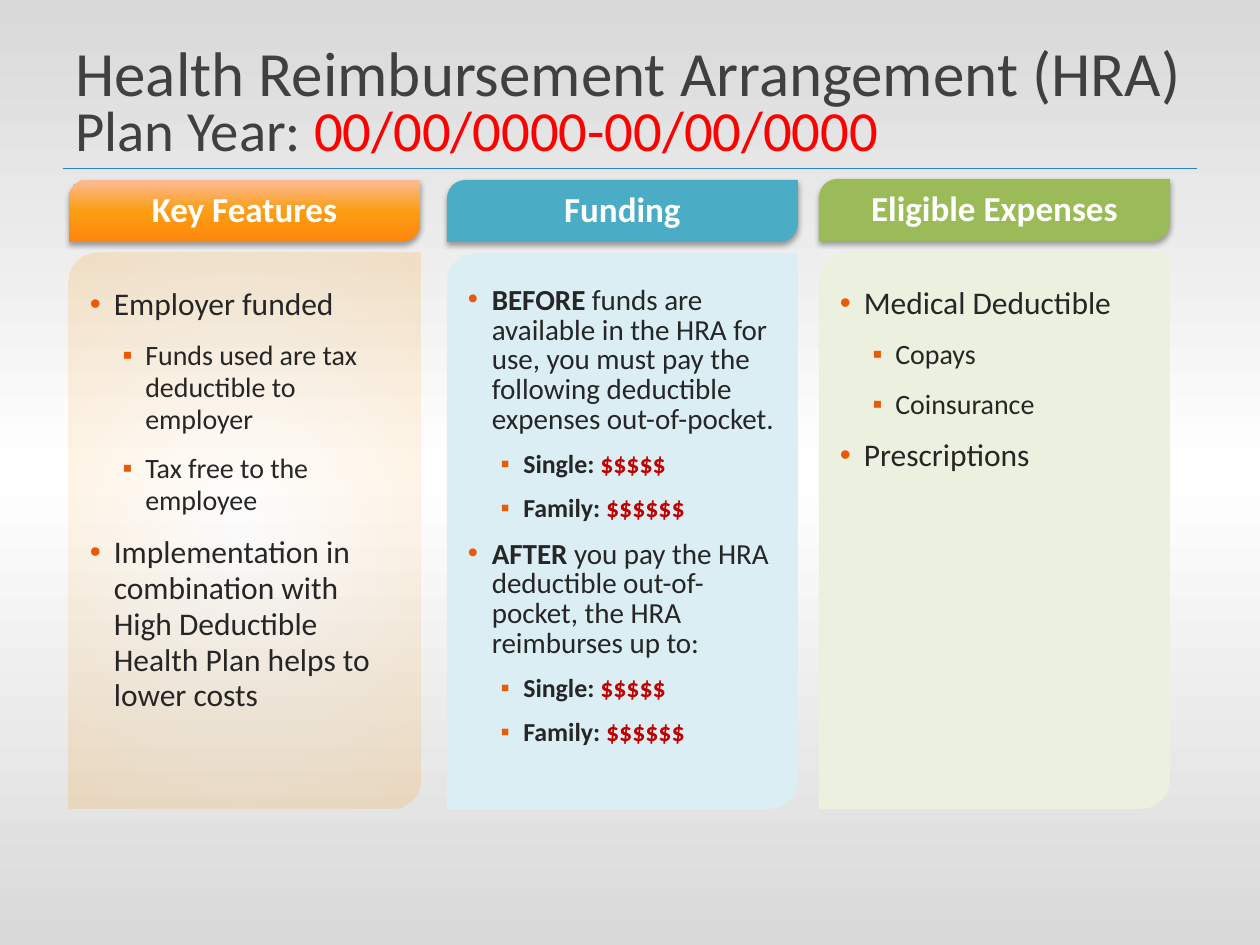
from dataclasses import dataclass
from lxml.etree import SubElement
from pptx import Presentation
from pptx.dml.color import RGBColor
from pptx.enum.shapes import MSO_CONNECTOR as Connector, MSO_SHAPE as Preset
from pptx.enum.text import MSO_ANCHOR as Anchor, PP_ALIGN as Align
from pptx.oxml.ns import qn
from pptx.util import Emu, Inches, Pt


@dataclass(frozen=True)
class Theme:
    font: str = "Calibri"
    title: str = "404040"
    title_alert: str = "FF0000"
    header: str = "FFFFFF"
    body: str = "262626"
    amount: str = "C00000"
    bullet: str = "EA5907"
    rule: str = "2780C8"
    shadow: str = "000000"
    page: tuple = ((0, "D9D9D9", 100), (50, "FFFFFF", 100), (100, "D9D9D9", 100))
    features: tuple = ((0, "FF870F", 100), (50, "FC9D12", 100), (100, "FCBB97", 100))
    features_panel: tuple = ((0, "FC9D12", 0), (100, "FC9D12", 19))
    funding: str = "4BACC6"
    funding_panel: str = "DBEEF4"
    expenses: str = "9BBB59"
    expenses_panel: str = "EBF1DE"
    title_size: float = 36
    subtitle_size: float = 32.4
    header_size: float = 20
    roomy_sizes: tuple = (18, 16)
    tight_sizes: tuple = (16.6, 14.8)


def px(length):
    return Emu(round(length * 914400 / 126))


def apply(target, **formats):
    for name, value in formats.items():
        setattr(target, name, value)


class SlideBuilder:
    """Draws styled elements on the current slide."""

    def __init__(self, deck, theme):
        self.theme = theme
        self.page = deck.slides.add_slide(deck.slide_layouts[6])

    def color(self, parent, rgb, opacity=100):
        node = SubElement(parent, qn("a:srgbClr"), val=rgb)
        if opacity < 100:
            SubElement(node, qn("a:alpha"), val=str(opacity * 1000))

    def gradient(self, shape, stops, radial):
        shape.fill.gradient()
        gradient = shape._element.spPr.find(qn("a:gradFill"))
        gradient.clear()
        stop_list = SubElement(gradient, qn("a:gsLst"))
        for position, rgb, opacity in stops:
            stop = SubElement(stop_list, qn("a:gs"), pos=str(position * 1000))
            self.color(stop, rgb, opacity)
        if radial:
            center = SubElement(gradient, qn("a:path"), path="circle")
            SubElement(center, qn("a:fillToRect"), **dict.fromkeys("ltrb", "50000"))
        else:
            SubElement(gradient, qn("a:lin"), ang="16200000", scaled="0")

    def shape(self, preset, area, fill, radial=False):
        shape = self.page.shapes.add_shape(preset, *map(px, area))
        shape.shadow.inherit = False
        shape.line.fill.background()
        if isinstance(fill, str):
            shape.fill.solid()
            shape.fill.fore_color.rgb = RGBColor.from_string(fill)
        else:
            self.gradient(shape, fill, radial)
        return shape

    def rule(self, left, right, top):
        line = self.page.shapes.add_connector(
            Connector.STRAIGHT, *map(px, (left, top, right, top)))
        line.line.color.rgb = RGBColor.from_string(self.theme.rule)
        line.line.width = Pt(0.5)
        SubElement(line._element.spPr, qn("a:effectLst"))

    def span(self, para, text, size, rgb, bold=False):
        span = para.add_run()
        span.text = text
        apply(span.font, name=self.theme.font, size=Pt(size), bold=bold)
        span.font.color.rgb = RGBColor.from_string(rgb)

    def title(self, area, heading, label, dates):
        theme = self.theme
        box = self.page.shapes.add_textbox(*map(px, area)).text_frame
        apply(box, word_wrap=True, vertical_anchor=Anchor.BOTTOM)
        para = box.paragraphs[0]
        para.line_spacing = 0.8
        self.span(para, heading, theme.title_size, theme.title)
        para.add_line_break()
        self.span(para, label, theme.subtitle_size, theme.title)
        self.span(para, dates, theme.subtitle_size, theme.title_alert)

    def header(self, area, text, fill):
        shape = self.shape(Preset.ROUND_2_DIAG_RECTANGLE, area, fill)
        shape.adjustments[0] = 0.296
        effects = shape._element.spPr.find(qn("a:effectLst"))
        shadow = SubElement(effects, qn("a:outerShdw"), blurRad=str(Pt(3.1)),
                            dist=str(Pt(1.8)), dir="5400000", rotWithShape="0")
        self.color(shadow, self.theme.shadow, 35)
        box = shape.text_frame
        apply(box, word_wrap=True, vertical_anchor=Anchor.MIDDLE,
              margin_left=0, margin_right=0)
        para = box.paragraphs[0]
        apply(para, alignment=Align.CENTER, line_spacing=0.9)
        self.span(para, text, self.theme.header_size, self.theme.header, True)

    def bullet(self, para, level):
        symbol, left, hang = (("•", 0.19, 0.19), ("▪", 0.44, 0.18))[level]
        settings = para._p.get_or_add_pPr()
        settings.set("marL", str(Inches(left)))
        settings.set("indent", str(-Inches(hang)))
        self.color(SubElement(settings, qn("a:buClr")), self.theme.bullet)
        SubElement(settings, qn("a:buFont"), typeface="Arial")
        SubElement(settings, qn("a:buChar"), char=symbol)

    def panel(self, area, fill, items, sizes, spacing):
        shape = self.shape(Preset.ROUND_2_DIAG_RECTANGLE, area, fill, radial=True)
        shape.adjustments[0] = 0.083
        box = shape.text_frame
        apply(box, word_wrap=True, vertical_anchor=Anchor.TOP, margin_top=Inches(0.2))
        for index, (level, bold_text, text, rgb) in enumerate(items):
            para = box.add_paragraph() if index else box.paragraphs[0]
            self.bullet(para, level)
            apply(para, level=level, alignment=Align.LEFT, line_spacing=spacing,
                  space_before=Pt(10 if index else 0))
            if bold_text:
                self.span(para, bold_text, sizes[level], self.theme.body, True)
            self.span(para, text, sizes[level], rgb, rgb == self.theme.amount)


def main():
    theme = Theme()
    deck = Presentation()
    apply(deck, slide_width=px(1260), slide_height=px(945))
    slide = SlideBuilder(deck, theme)

    slide.shape(Preset.RECTANGLE, (0, 0, 1260, 945), theme.page)
    slide.rule(63, 1197, 168)
    slide.title((63, 11, 1134, 158), "Health Reimbursement Arrangement (HRA)",
                "Plan Year: ", "00/00/0000-00/00/0000")

    features = [
        (0, "", "Employer funded", theme.body),
        (1, "", "Funds used are tax deductible to employer", theme.body),
        (1, "", "Tax free to the employee", theme.body),
        (0, "", "Implementation in combination with High Deductible "
                "Health Plan helps to lower costs", theme.body),
    ]
    amounts = [
        (1, "Single: ", "$$$$$", theme.amount),
        (1, "Family: ", "$$$$$$", theme.amount),
    ]
    funding = [
        (0, "BEFORE", " funds are available in the HRA for use, you must pay the "
                      "following deductible expenses out-of-pocket.", theme.body),
        *amounts,
        (0, "AFTER", " you pay the HRA deductible out-of-pocket, the HRA "
                     "reimburses up to:", theme.body),
        *amounts,
    ]
    expenses = [
        (0, "", "Medical Deductible", theme.body),
        (1, "", "Copays", theme.body),
        (1, "", "Coinsurance", theme.body),
        (0, "", "Prescriptions", theme.body),
    ]
    columns = [
        (69, 180, "Key Features", theme.features, theme.features_panel,
         features, theme.roomy_sizes, 0.95),
        (447, 180, "Funding", theme.funding, theme.funding_panel,
         funding, theme.tight_sizes, 0.85),
        (819, 179, "Eligible Expenses", theme.expenses, theme.expenses_panel,
         expenses, theme.roomy_sizes, 0.95),
    ]
    width, bottom = 351, 809
    for left, top, heading, fill, panel_fill, items, sizes, spacing in columns:
        panel_top = top + 73
        slide.header((left, top, width, 62), heading, fill)
        slide.panel((left, panel_top, width, bottom - panel_top),
                    panel_fill, items, sizes, spacing)

    deck.save("out.pptx")


if __name__ == "__main__":
    main()
